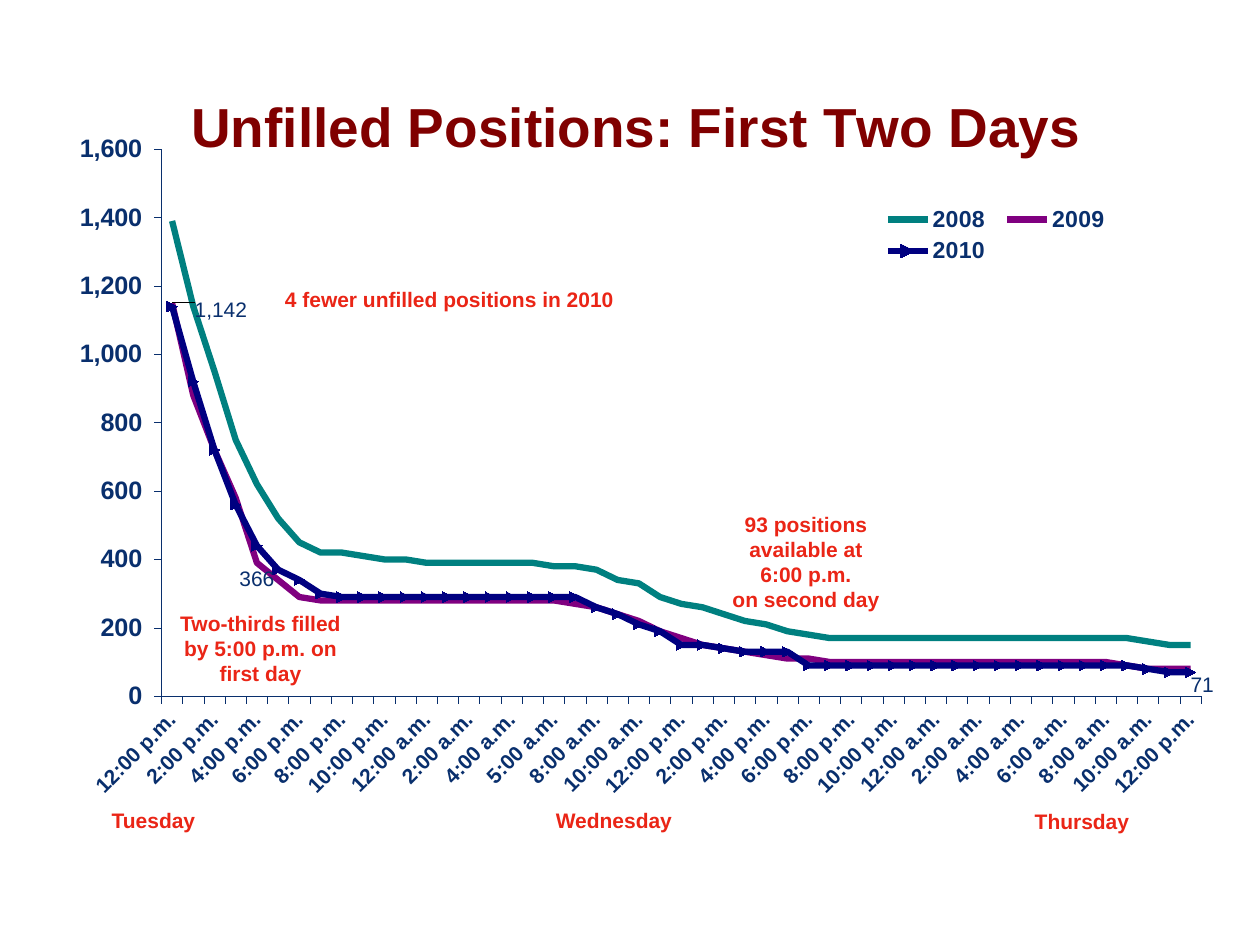
from pptx import Presentation
from pptx.chart.data import CategoryChartData
from pptx.dml.color import RGBColor
from pptx.enum.chart import (XL_CHART_TYPE, XL_LABEL_POSITION, XL_LEGEND_POSITION,
                             XL_MARKER_STYLE, XL_TICK_MARK)
from pptx.enum.text import MSO_AUTO_SIZE, PP_ALIGN
from pptx.oxml import parse_xml
from pptx.oxml.ns import nsdecls, qn
from pptx.util import Pt

PX = 914400 // 126
CENTER = PP_ALIGN.CENTER
FIT_SHAPE = MSO_AUTO_SIZE.SHAPE_TO_FIT_TEXT
OUTSIDE = XL_TICK_MARK.OUTSIDE
BELOW = XL_LABEL_POSITION.BELOW
RIGHT = XL_LABEL_POSITION.RIGHT

THEME = {
    "font": "Arial",
    "title": "800000", "ink": "092F6D", "note": "EA2516",
    "2008": "008080", "2009": "800080", "2010": "000080",
    "title_size": 31.4, "value_size": 14.4, "legend_size": 13.2, "small_size": 12,
}


def style(font, size, color, bold=True):
    font.name = THEME["font"]
    font.size = Pt(THEME[size])
    font.bold = bold
    font.color.rgb = RGBColor.from_string(THEME[color])


def set_layout(parent, index, modes="", **sizes):
    for old in parent.findall(qn("c:layout")):
        parent.remove(old)
    values = "".join(f'<c:{key} val="{value}"/>' for key, value in sizes.items())
    parent.insert(index, parse_xml(
        f'<c:layout {nsdecls("c")}><c:manualLayout>{modes}{values}'
        '</c:manualLayout></c:layout>'))


deck = Presentation()
deck.slide_width = 1260 * PX
deck.slide_height = 945 * PX
page = deck.slides.add_slide(deck.slide_layouts[6])

# Hourly data from Tuesday noon to Thursday noon
hours = [f"{(hour - 1) % 12 + 1}:00 {'a.m.' if hour % 24 < 12 else 'p.m.'}"
         for hour in range(12, 61)]
hours[18] = "5:00 a.m."
positions = {
    "2008": [1390, 1140, 950, 750, 620, 520, 450, 420, 420, 410, 400, 400]
            + [390] * 6 + [380, 380, 370, 340, 330, 290, 270, 260, 240, 220, 210, 190, 180]
            + [170] * 15 + [160, 150, 150],
    "2009": [1150, 880, 720, 580, 390, 340, 290] + [280] * 12
            + [270, 260, 240, 220, 190, 170, 150, 140, 130, 120, 110, 110]
            + [100] * 14 + [90, 80, 80, 80],
    "2010": [1140, 920, 720, 560, 440, 370, 340, 300] + [290] * 12
            + [260, 240, 210, 190, 150, 150, 140, 130, 130, 130]
            + [90] * 16 + [80, 70, 70],
}
data = CategoryChartData()
data.categories = hours
for year, values in positions.items():
    data.add_series(year, values)

# Line chart
chart = page.shapes.add_chart(XL_CHART_TYPE.LINE_MARKERS, 42 * PX, 64 * PX,
                              1172 * PX, 761 * PX, data).chart
style(chart.font, "small_size", "ink")
edge = '<c:xMode val="edge"/><c:yMode val="edge"/>'
plot_area = chart.plots[0]._element.getparent()
set_layout(plot_area, 0, '<c:layoutTarget val="inner"/>' + edge,
           x=0.102, y=0.112, w=0.888, h=0.719)

# Title and legend
title = chart.chart_title
title.text_frame.text = "Unfilled Positions: First Two Days"
style(title.text_frame.paragraphs[0].runs[0].font, "title_size", "title")
set_layout(title._element, 1, edge, x=0.119, y=0.022)
title.include_in_layout = False
chart.has_legend = True
legend = chart.legend
legend.position = XL_LEGEND_POSITION.RIGHT
legend.include_in_layout = False
style(legend.font, "legend_size", "ink")
set_layout(legend._element, 1, edge, x=0.71, y=0.18, w=0.21, h=0.09)

# Axes
hour_axis, value_axis = chart.category_axis, chart.value_axis
for axis, size in ((hour_axis, "small_size"), (value_axis, "value_size")):
    axis.has_major_gridlines = False
    axis.major_tick_mark = OUTSIDE
    axis.format.line.color.rgb = RGBColor.from_string(THEME["ink"])
    axis.format.line.width = Pt(0.3)
    style(axis.tick_labels.font, size, "ink")
value_axis.minimum_scale = 0
value_axis.maximum_scale = 1600
value_axis.major_unit = 200
value_axis.tick_labels.number_format = r"#,##0_);[Red]\(#,##0\)"
value_axis.tick_labels.number_format_is_linked = False
hour_axis._element.find(qn("c:txPr")).find(qn("a:bodyPr")).set("rot", "-2700000")
multi_level = hour_axis._element.find(qn("c:noMultiLvlLbl"))
for tag, step in (("tickLblSkip", 2), ("tickMarkSkip", 1)):
    multi_level.addprevious(parse_xml(f'<c:{tag} {nsdecls("c")} val="{step}"/>'))

# Series lines, with markers on the latest year only
for series in chart.plots[0].series:
    color = RGBColor.from_string(THEME[series.name])
    series.smooth = False
    series.format.line.color.rgb = color
    series.format.line.width = Pt(3.6)
    series.marker.style = XL_MARKER_STYLE.NONE
    if series.name == "2010":
        series.marker.style = XL_MARKER_STYLE.DOT
        series.marker.size = 6
        series.marker.format.fill.solid()
        series.marker.format.fill.fore_color.rgb = color
        series.marker.format.line.color.rgb = color

# Labels on single points
for point, text, side, shift_x, shift_y in (
        (0, "1,142", RIGHT, 0.015, 0.01), (4, "366", BELOW, 0, 0), (48, "71", BELOW, 0.01, 0)):
    label = chart.plots[0].series[1].points[point].data_label
    label.text_frame.text = text
    style(label.text_frame.paragraphs[0].runs[0].font, "small_size", "ink", bold=False)
    label.position = side
    if shift_x:
        set_layout(label._get_or_add_dLbl(), 1, x=shift_x, y=shift_y)

# Day names and remarks
for left, top, width, height, wrap, lines in (
        (98, 801, 111, 38, False, ["Tuesday"]),
        (543, 801, 142, 38, False, ["Wednesday"]),
        (1022, 802, 120, 38, False, ["Thursday"]),
        (253, 280, 393, 38, True, ["4 fewer unfilled positions in 2010"]),
        (690, 505, 232, 115, True,
         ["93 positions available at", "6:00 p.m.", "on second day"]),
        (156, 604, 209, 89, True, ["Two-thirds filled by 5:00 p.m. on first day"])):
    box = page.shapes.add_textbox(left * PX, top * PX, width * PX, height * PX)
    frame = box.text_frame
    frame.word_wrap = wrap
    frame.auto_size = FIT_SHAPE
    frame.text = "\n".join(lines)
    for para in frame.paragraphs:
        para.alignment = CENTER
        style(para.runs[0].font, "small_size", "note")

deck.save("out.pptx")
